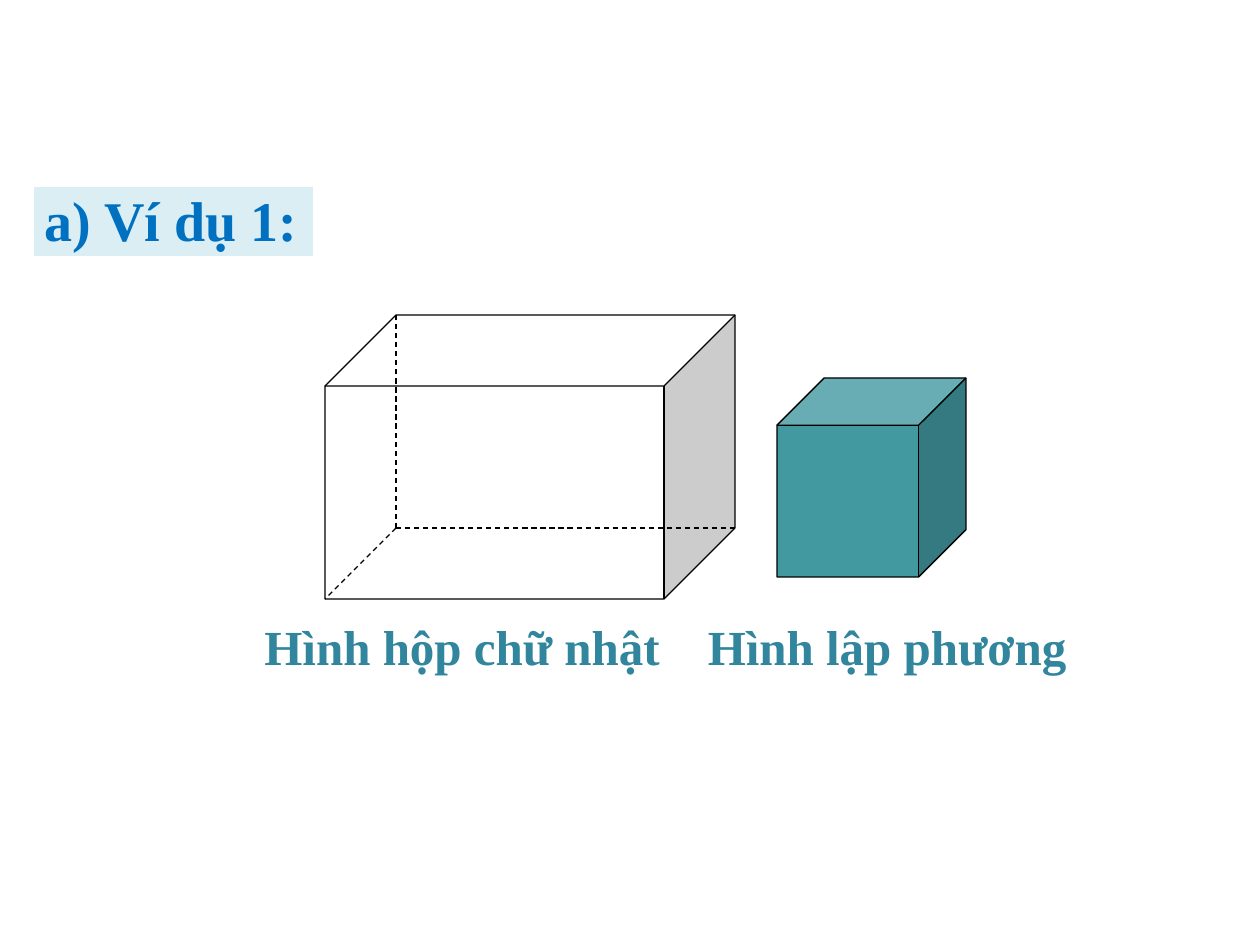
from dataclasses import dataclass
from pptx import Presentation
from pptx.dml.color import RGBColor
from pptx.enum.dml import MSO_LINE
from pptx.enum.shapes import MSO_CONNECTOR, MSO_SHAPE
from pptx.enum.text import MSO_AUTO_SIZE, PP_ALIGN
from pptx.oxml.ns import qn
from pptx.util import Emu, Pt
from lxml import etree

RECT, CUBE = MSO_SHAPE.RECTANGLE, MSO_SHAPE.CUBE
LINE, DASH = MSO_CONNECTOR.STRAIGHT, MSO_LINE.DASH
LEFT, MID = PP_ALIGN.LEFT, PP_ALIGN.CENTER
GROW = MSO_AUTO_SIZE.SHAPE_TO_FIT_TEXT
SCALE = 914400 // 126


def px(*nums):
    return [Emu(n * SCALE) for n in nums]


@dataclass
class Theme:
    font: str = "Times New Roman"
    white: str = "FFFFFF"
    black: str = "000000"
    pale: str = "DBEEF4"
    teal: str = "4299A0"
    blue: str = "0070C0"
    label: str = "31859C"
    head: int = 32
    body: int = 28
    thin: float = 0.75
    thick: float = 2


class Board:
    def __init__(self, deck, theme):
        self.theme = theme
        self.slide = deck.slides.add_slide(deck.slide_layouts[6])

    def stroke(self, line, color, width):
        line.color.rgb = RGBColor.from_string(color)
        line.width = Pt(width)

    def solid(self, kind, area, fill, color, width, home=None):
        shapes = (home or self.slide).shapes
        item = shapes.add_shape(kind, *px(*area))
        item.shadow.inherit = False
        item.fill.solid()
        item.fill.fore_color.rgb = RGBColor.from_string(fill)
        self.stroke(item.line, color, width)
        return item

    def edge(self, group, start, end):
        item = group.shapes.add_connector(LINE, *px(*start, *end))
        self.stroke(item.line, self.theme.black, self.theme.thin)
        item.line.dash_style = DASH
        etree.SubElement(item._element.spPr, qn("a:effectLst"))

    def prism(self, area, depth):
        left, top, width, height = area
        group = self.slide.shapes.add_group_shape()
        self.solid(CUBE, area, self.theme.white, self.theme.black,
                   self.theme.thin, group)
        back = (left + depth, top + height - depth)
        ends = [(back[0], top), (left + width, back[1]), (left, top + height)]
        for end in ends:
            self.edge(group, back, end)

    def text(self, words, area, size, color, align=MID, wrap=True):
        frame = self.slide.shapes.add_textbox(*px(*area)).text_frame
        frame.word_wrap = wrap
        frame.auto_size = GROW
        para = frame.paragraphs[0]
        para.alignment = align
        run = para.add_run()
        run.text = words
        style = {"name": self.theme.font, "size": Pt(size), "bold": True}
        for key, value in style.items():
            setattr(run.font, key, value)
        run.font.color.rgb = RGBColor.from_string(color)


def main():
    deck = Presentation()
    deck.slide_width, deck.slide_height = px(1260, 945)
    theme = Theme()
    board = Board(deck, theme)
    board.solid(RECT, (32, 185, 283, 73), theme.pale, theme.white, theme.thick)
    board.prism((325, 315, 410, 284), 71)
    board.solid(CUBE, (777, 378, 189, 199), theme.teal, theme.black, theme.thin)
    board.text("a) Ví dụ 1:", (32, 179, 294, 81), theme.head, theme.blue, LEFT)
    board.text("Hình hộp chữ nhật", (231, 610, 462, 72), theme.body, theme.label)
    board.text("Hình lập phương", (693, 610, 388, 72), theme.body, theme.label,
               wrap=False)
    deck.save("out.pptx")


if __name__ == "__main__":
    main()
